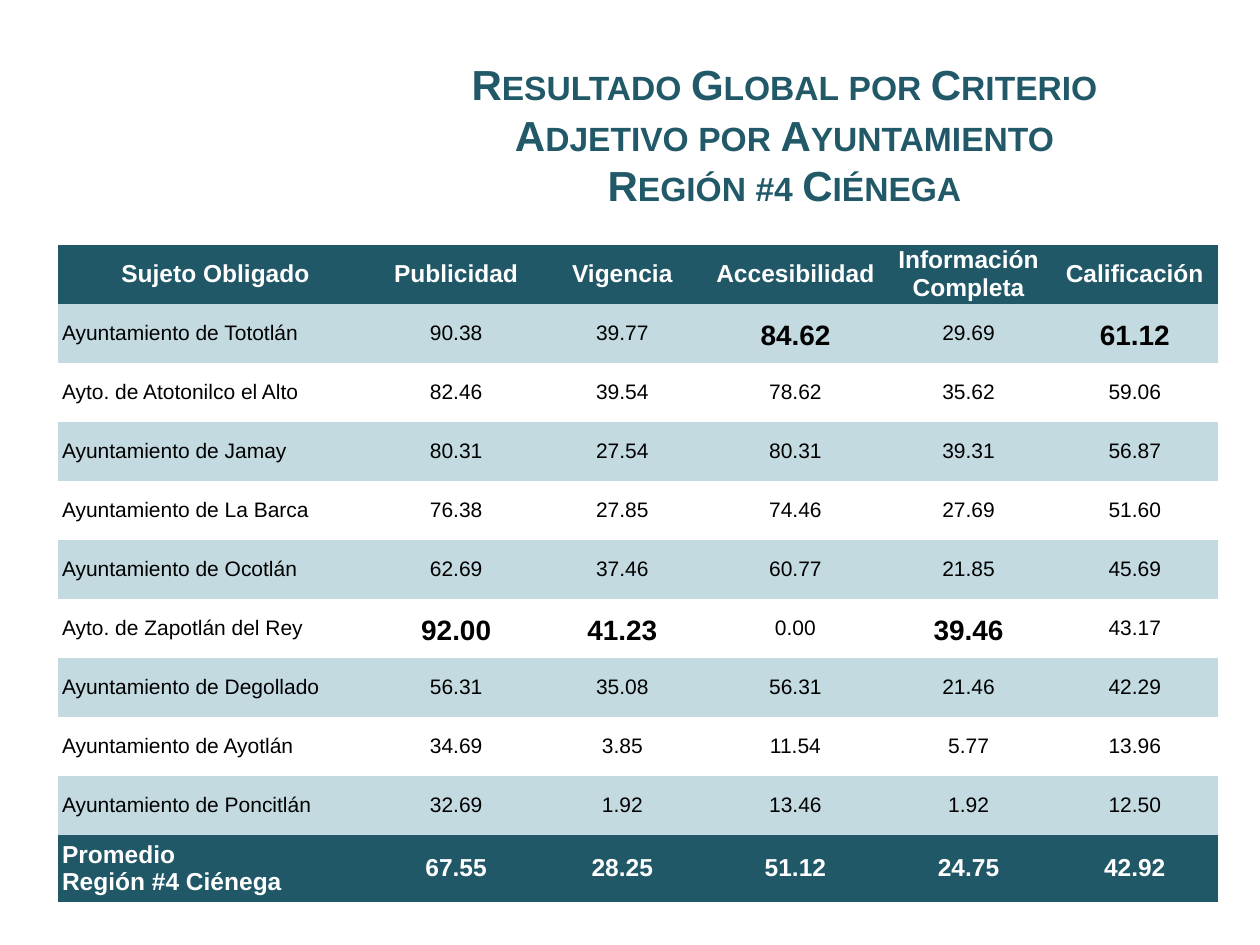
from pptx import Presentation
from pptx.dml.color import RGBColor
from pptx.enum import text
from pptx.util import Cm, Pt

TEAL, PALE, WHITE, BLACK = "215868", "C2DAE0", "FFFFFF", "000000"

HEADS = ["Sujeto Obligado", "Publicidad", "Vigencia", "Accesibilidad",
         "Información\vCompleta", "Calificación"]
SCORES = [
    ["Ayuntamiento de Tototlán", "90.38", "39.77", "84.62", "29.69", "61.12"],
    ["Ayto. de Atotonilco el Alto", "82.46", "39.54", "78.62", "35.62", "59.06"],
    ["Ayuntamiento de Jamay", "80.31", "27.54", "80.31", "39.31", "56.87"],
    ["Ayuntamiento de La Barca", "76.38", "27.85", "74.46", "27.69", "51.60"],
    ["Ayuntamiento de Ocotlán", "62.69", "37.46", "60.77", "21.85", "45.69"],
    ["Ayto. de Zapotlán del Rey", "92.00", "41.23", "0.00", "39.46", "43.17"],
    ["Ayuntamiento de Degollado", "56.31", "35.08", "56.31", "21.46", "42.29"],
    ["Ayuntamiento de Ayotlán", "34.69", "3.85", "11.54", "5.77", "13.96"],
    ["Ayuntamiento de Poncitlán", "32.69", "1.92", "13.46", "1.92", "12.50"],
]
MEANS = ["Promedio\nRegión #4 Ciénega", "67.55", "28.25", "51.12", "24.75", "42.92"]
WIDTHS = [6.35, 3.35, 3.35, 3.63, 3.35, 3.35]
HEIGHTS = [1.19] * 10 + [1.35]
NO_STYLE = "{2D5ABB26-0587-4C30-8999-92F81FD0307C}"


def rgb(code):
    return RGBColor.from_string(code)


def style(par, size, color, bold):
    """Format every run of a paragraph."""
    for run in par.runs:
        font = run.font
        font.name, font.size, font.bold = "Arial", Pt(size), bold
        font.color.rgb = rgb(color)


prs = Presentation()
prs.slide_width, prs.slide_height = Cm(25.4), Cm(19.05)
slide = prs.slides.add_slide(prs.slide_layouts[5])

# Title
title = slide.shapes.title
title.left, title.top = Cm(7.5), Cm(1.12)
title.width, title.height = Cm(16.63), Cm(3.18)
frame = title.text_frame
frame.text = ("Resultado Global por Criterio Adjetivo por Ayuntamiento"
              "\vRegión #4 Ciénega")
frame.vertical_anchor = text.MSO_ANCHOR.MIDDLE
frame.auto_size = text.MSO_AUTO_SIZE.NONE
head = frame.paragraphs[0]
head.alignment = text.PP_ALIGN.CENTER
style(head, 24, "215968", True)
for run in head.runs:
    run.font._element.set("cap", "small")

# Table
rows = [HEADS] + SCORES + [MEANS]
table = slide.shapes.add_table(len(rows), len(HEADS), Cm(1.17), Cm(4.93),
                               Cm(sum(WIDTHS)), Cm(sum(HEIGHTS))).table
table._tbl.tblPr[0].text = NO_STYLE
table.horz_banding = False
for col, width in zip(table.columns, WIDTHS):
    col.width = Cm(width)
for row, height in zip(table.rows, HEIGHTS):
    row.height = Cm(height)

# The best score of each criterion stands out
best = [None] + [max(col, key=float) for col in list(zip(*SCORES))[1:]]

for r, row in enumerate(rows):
    edge = r in (0, len(rows) - 1)
    for c, value in enumerate(row):
        cell = table.cell(r, c)
        cell.text = value
        cell.vertical_anchor = text.MSO_ANCHOR.MIDDLE
        cell.margin_left = cell.margin_right = Cm(0.08)
        cell.margin_top = cell.margin_bottom = 0
        if edge or r % 2:
            cell.fill.solid()
            cell.fill.fore_color.rgb = rgb(TEAL if edge else PALE)
        else:
            cell.fill.background()
        top = not edge and value == best[c]
        size = 14 if edge else 16 if top else 12
        for par in cell.text_frame.paragraphs:
            if r == 0 or c > 0:
                par.alignment = text.PP_ALIGN.CENTER
            if top:
                par.line_spacing = 1.15
            style(par, size, WHITE if edge else BLACK, edge or top)

prs.save("out.pptx")
